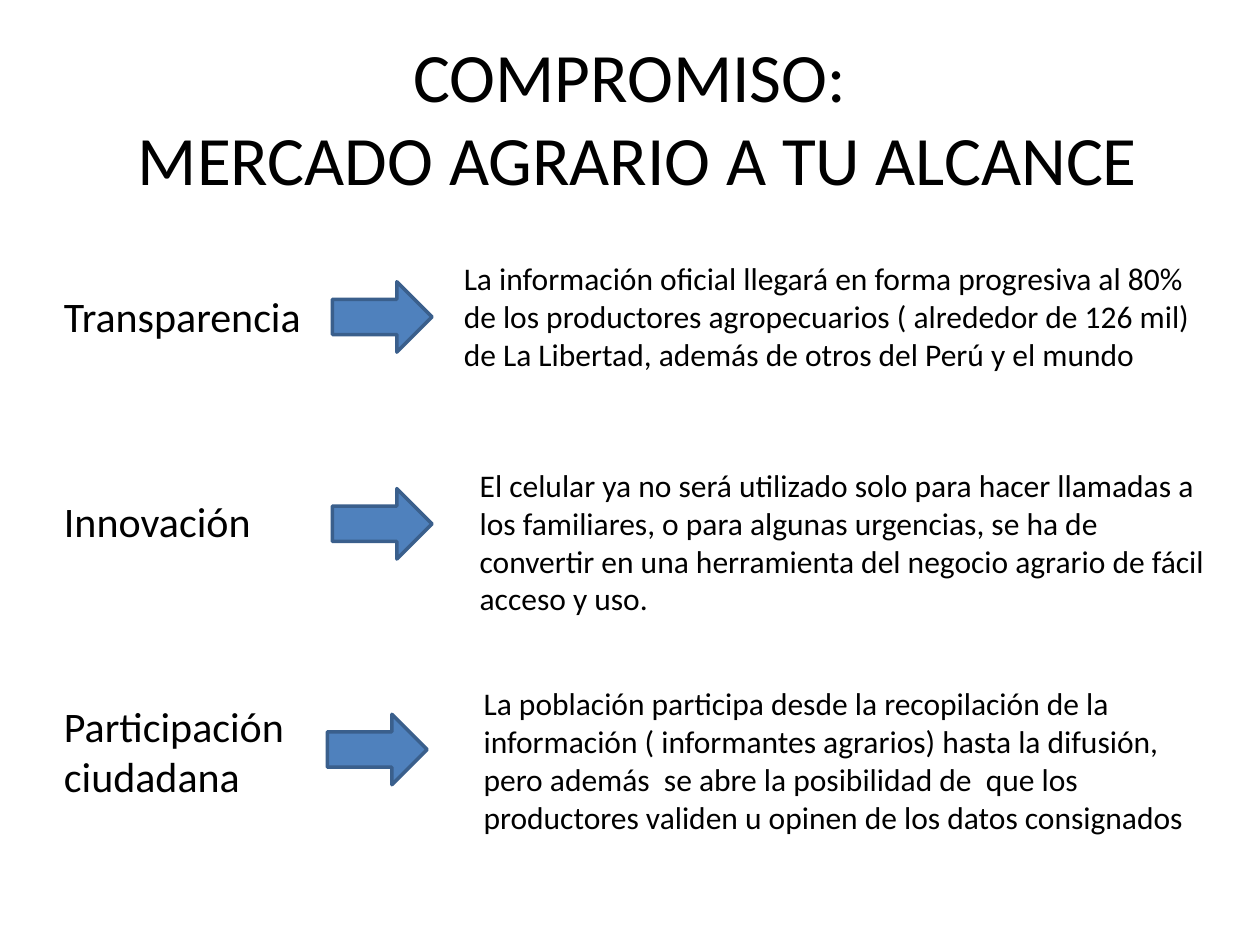
from pptx import Presentation
from pptx.dml.color import RGBColor
from pptx.enum.shapes import MSO_SHAPE as Shape
from pptx.enum.text import MSO_ANCHOR as Anchor, PP_ALIGN as Align
from pptx.util import Cm, Pt

COLORS = {"text": "000000", "arrow": "4F81BD", "outline": "3A5F8C"}
FONT = "Calibri"
TITLE = "COMPROMISO:\v MERCADO AGRARIO A TU ALCANCE"

COMMITMENTS = [
    {"label": "Transparencia",
     "text": "La información oficial llegará en forma progresiva al 80% de los productores "
             "agropecuarios ( alrededor de 126 mil) de La Libertad, además de otros del Perú "
             "y el mundo",
     "arrow": (6.7, 5.68), "description": (9.1, 5.1, 2.57)},
    {"label": "Innovación",
     "text": "El celular ya no será utilizado solo para hacer llamadas a los familiares, o para "
             "algunas urgencias, se ha de convertir en una herramienta del negocio agrario de "
             "fácil acceso y uso.",
     "arrow": (6.7, 9.85), "description": (9.42, 9.27, 3.33)},
    {"label": "Participación\nciudadana",
     "text": "La población participa desde la recopilación de la información ( informantes "
             "agrarios) hasta la difusión,  pero además  se abre la posibilidad de  que los "
             "productores validen u opinen de los datos consignados",
     "arrow": (6.6, 14.4), "description": (9.5, 13.67, 3.33)},
]

LABEL_LEFT, LABEL_TOP, LABEL_PITCH = 1.04, 5.73, 4.13
LABEL_WIDTH, LABEL_LINE = 5.6, 1.03
ARROW_WIDTH, ARROW_HEIGHT = 2.01, 1.42
DESCRIPTION_WIDTH = 15.39


def color(name):
    return RGBColor.from_string(COLORS[name])


def add_text(slide, text, box, size, align=Align.LEFT, anchor=Anchor.TOP):
    shape = slide.shapes.add_textbox(*map(Cm, box))
    frame = shape.text_frame
    frame.word_wrap = True
    frame.vertical_anchor = anchor
    frame.text = text
    for paragraph in frame.paragraphs:
        paragraph.alignment = align
        for run in paragraph.runs:
            run.font.name = FONT
            run.font.size = Pt(size)
            run.font.color.rgb = color("text")


def add_arrow(slide, left, top):
    arrow = slide.shapes.add_shape(
        Shape.RIGHT_ARROW, Cm(left), Cm(top), Cm(ARROW_WIDTH), Cm(ARROW_HEIGHT))
    arrow.shadow.inherit = False
    arrow.fill.solid()
    arrow.fill.fore_color.rgb = color("arrow")
    arrow.line.color.rgb = color("outline")
    arrow.line.width = Pt(2)


def main():
    presentation = Presentation()
    presentation.slide_width, presentation.slide_height = Cm(25.4), Cm(19.05)
    slide = presentation.slides.add_slide(presentation.slide_layouts[6])

    add_text(slide, TITLE, (1.27, 0.76, 22.86, 3.18), 39.6, Align.CENTER, Anchor.MIDDLE)
    for index, item in enumerate(COMMITMENTS):
        label = item["label"]
        label_height = 0.25 + LABEL_LINE * len(label.splitlines())
        label_top = LABEL_TOP + index * LABEL_PITCH
        add_text(slide, label, (LABEL_LEFT, label_top, LABEL_WIDTH, label_height), 24,
                 Align.JUSTIFY)
        add_arrow(slide, *item["arrow"])
        left, top, height = item["description"]
        add_text(slide, item["text"], (left, top, DESCRIPTION_WIDTH, height), 18)

    presentation.save("out.pptx")


if __name__ == "__main__":
    main()
